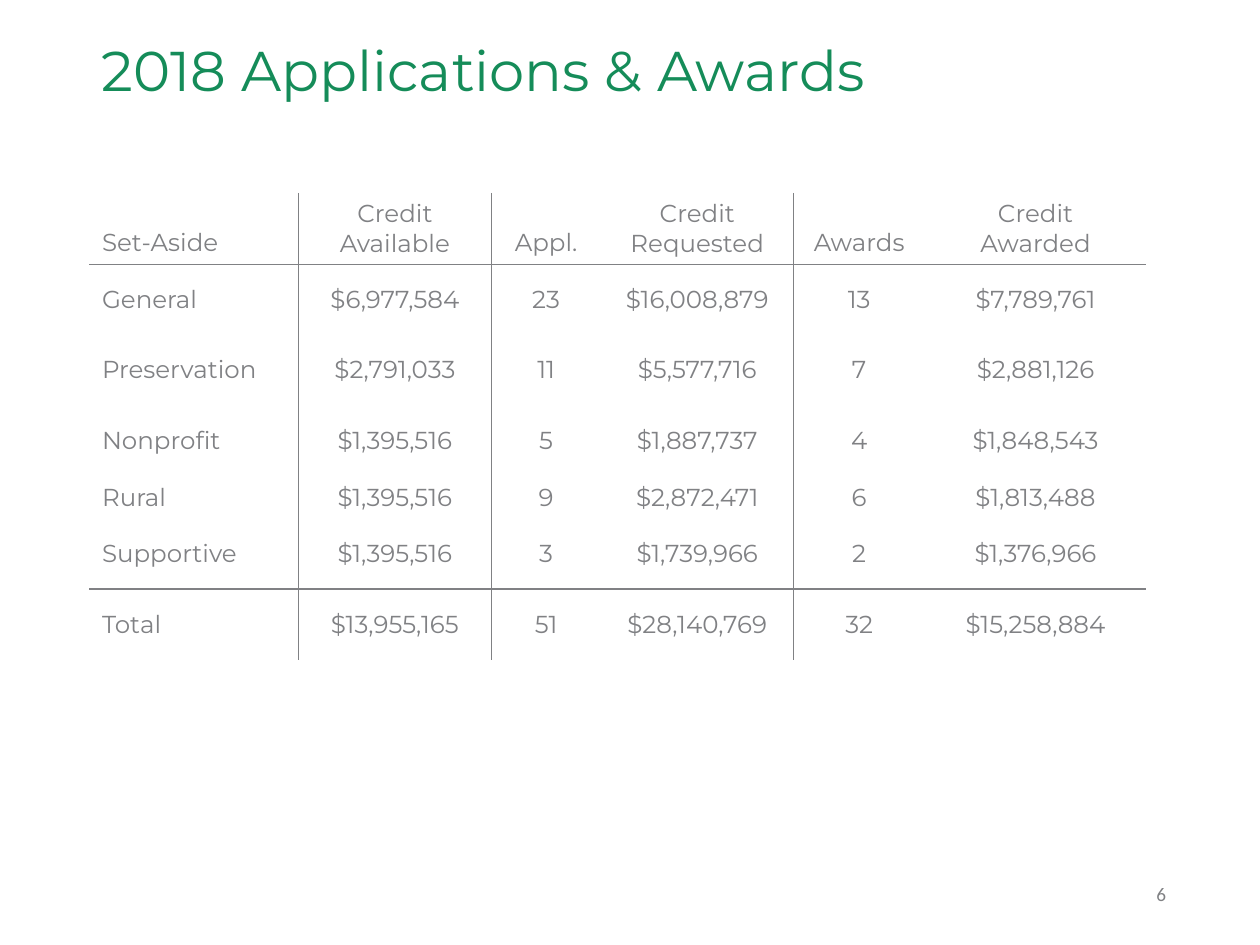
from lxml import etree
from pptx import Presentation
from pptx.dml.color import RGBColor
from pptx.enum.text import MSO_ANCHOR, PP_ALIGN
from pptx.oxml.ns import qn
from pptx.util import Inches, Pt

LEFT, CENTER = PP_ALIGN.LEFT, PP_ALIGN.CENTER
BOTTOM, MIDDLE = MSO_ANCHOR.BOTTOM, MSO_ANCHOR.MIDDLE

# Content
TITLE = "2018 Applications & Awards"
PAGE_NUMBER = "6"
AWARDS = [
    ("Set-Aside", "Credit\nAvailable", "Appl.", "Credit\nRequested", "Awards", "Credit\nAwarded"),
    ("General", "$6,977,584", "23", "$16,008,879", "13", "$7,789,761"),
    ("Preservation", "$2,791,033", "11", "$5,577,716", "7", "$2,881,126"),
    ("Nonprofit", "$1,395,516", "5", "$1,887,737", "4", "$1,848,543"),
    ("Rural", "$1,395,516", "9", "$2,872,471", "6", "$1,813,488"),
    ("Supportive", "$1,395,516", "3", "$1,739,966", "2", "$1,376,966"),
    ("Total", "$13,955,165", "51", "$28,140,769", "32", "$15,258,884"),
]
COLUMN_WIDTHS = [1.66, 1.53, 0.87, 1.53, 1.04, 1.76]
ROW_HEIGHTS = [0.56, 0.56, 0.56, 0.56, 0.34, 0.56, 0.56]
RULED_COLUMNS = {0, 1, 3}  # vertical rule on the right
RULED_ROWS = {0, 5}  # horizontal rule below
GREEN, GRAY = "158C59", "808184"


def color(hex_value):
    return RGBColor.from_string(hex_value)


def write(frame, text, size, font, hex_value, align=LEFT):
    frame.text = text
    for paragraph in frame.paragraphs:
        paragraph.alignment = align
        for run in paragraph.runs:
            run.font.size = Pt(size)
            run.font.name = font
            run.font.color.rgb = color(hex_value)


def add_label(slide, box, text, size, font, hex_value, wrap=True):
    frame = slide.shapes.add_textbox(*map(Inches, box)).text_frame
    frame.word_wrap = wrap
    write(frame, text, size, font, hex_value)
    return frame


def set_borders(cell, row, column):
    ruled = {
        "a:lnL": column - 1 in RULED_COLUMNS,
        "a:lnR": column in RULED_COLUMNS,
        "a:lnT": row - 1 in RULED_ROWS,
        "a:lnB": row in RULED_ROWS,
    }
    properties = cell._tc.get_or_add_tcPr()
    for tag, visible in ruled.items():
        line = etree.SubElement(properties, qn(tag), w=str(Pt(1)))
        if visible:
            fill = etree.SubElement(line, qn("a:solidFill"))
            etree.SubElement(fill, qn("a:srgbClr"), val=GRAY)
        else:
            etree.SubElement(line, qn("a:noFill"))


def add_awards_table(slide):
    table = slide.shapes.add_table(
        len(AWARDS), len(COLUMN_WIDTHS), Inches(0.71), Inches(1.53),
        Inches(sum(COLUMN_WIDTHS)), Inches(sum(ROW_HEIGHTS))).table
    table.first_row = table.horz_banding = False
    for column, width in zip(table.columns, COLUMN_WIDTHS):
        column.width = Inches(width)
    for row, height in zip(table.rows, ROW_HEIGHTS):
        row.height = Inches(height)

    for r, entries in enumerate(AWARDS):
        for c, entry in enumerate(entries):
            cell = table.cell(r, c)
            write(cell.text_frame, entry, 14, "Montserrat", GRAY, CENTER if c else LEFT)
            cell.vertical_anchor = MIDDLE if r else BOTTOM
            set_borders(cell, r, c)
            cell.fill.background()


def main():
    deck = Presentation()
    deck.slide_width, deck.slide_height = Inches(10), Inches(7.5)
    slide = deck.slides.add_slide(deck.slide_layouts[6])

    # Page number, title and table
    add_label(slide, (9.08, 6.95, 0.38, 0.29), PAGE_NUMBER, 11, "Calibri", GRAY, wrap=False)
    title = add_label(slide, (0.71, 0.29, 8.39, 1.11), TITLE, 32, "Montserrat", GREEN)
    title.paragraphs[0].line_spacing = 0.9
    add_awards_table(slide)

    deck.save("out.pptx")


if __name__ == "__main__":
    main()
